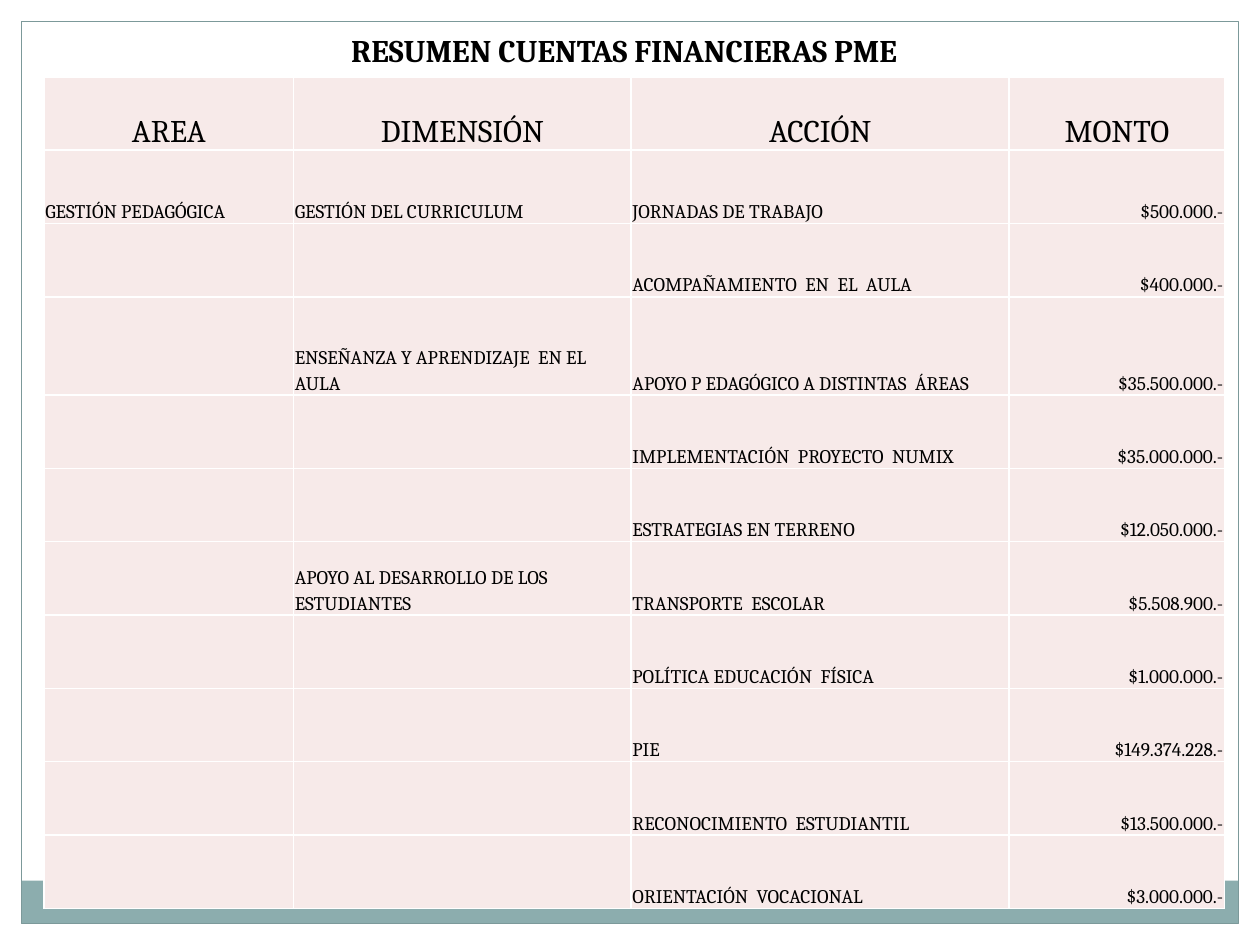
"""Builds a one-slide summary of PME financial accounts."""
from lxml import etree
from pptx import Presentation
from pptx import util as u
from pptx.dml.color import RGBColor
from pptx.enum import shapes, text
from pptx.oxml.ns import qn

TITLE = "RESUMEN CUENTAS FINANCIERAS PME"
HEADER = ("AREA", "DIMENSIÓN", "ACCIÓN", "MONTO")
ROWS = [
    ("GESTIÓN PEDAGÓGICA", "GESTIÓN DEL CURRICULUM", "JORNADAS DE TRABAJO", "$500.000.-"),
    ("", "", "ACOMPAÑAMIENTO  EN  EL  AULA", "$400.000.-"),
    ("", "ENSEÑANZA Y APRENDIZAJE  EN EL AULA", "APOYO P EDAGÓGICO A DISTINTAS  ÁREAS", "$35.500.000.-"),
    ("", "", "IMPLEMENTACIÓN  PROYECTO  NUMIX", "$35.000.000.-"),
    ("", "", "ESTRATEGIAS EN TERRENO", "$12.050.000.-"),
    ("", "APOYO AL DESARROLLO DE LOS  ESTUDIANTES", "TRANSPORTE  ESCOLAR", "$5.508.900.-"),
    ("", "", "POLÍTICA EDUCACIÓN  FÍSICA", "$1.000.000.-"),
    ("", "", "PIE", "$149.374.228.-"),
    ("", "", "RECONOCIMIENTO  ESTUDIANTIL", "$13.500.000.-"),
    ("", "", "ORIENTACIÓN  VOCACIONAL", "$3.000.000.-"),
]
COLS = (1.98, 2.68, 3, 1.71)
TALL_ROW, TALL_H = 3, 0.78
W, H, MARGIN, BAND_H = 10, 7.5, 0.17, 0.34
TABLE_X, TABLE_Y, TABLE_H = 0.35, 0.61, 6.6

FONT = "Cambria"
BLACK = RGBColor(0, 0, 0)
WHITE = RGBColor(0xFF, 0xFF, 0xFF)
TEAL = RGBColor(0x8C, 0xAD, 0xAE)
FRAME = RGBColor(0x7C, 0x99, 0x9A)
PINK = RGBColor(0xF7, 0xEA, 0xE9)
AL = text.PP_ALIGN


def write(tf, words, size=11, bold=False, align=AL.LEFT, spacing=None):
    p = tf.paragraphs[0]
    p.alignment, p.line_spacing = align, spacing
    r = p.add_run()
    r.text = words
    r.font.name, r.font.size, r.font.bold = FONT, u.Pt(size), bold
    r.font.color.rgb = BLACK


def rect(s, x, y, w, h, fill=None, line=None):
    sp = s.shapes.add_shape(shapes.MSO_SHAPE.RECTANGLE, *map(u.Inches, (x, y, w, h)))
    sp.shadow.inherit = False
    for part, color in ((sp.fill, fill), (sp.line.fill, line)):
        if color is None:
            part.background()
        else:
            part.solid()
            part.fore_color.rgb = color
    if line is not None:
        sp.line.width = u.Pt(0.75)


def style_cell(cell):
    cell.vertical_anchor = text.MSO_ANCHOR.BOTTOM
    cell.margin_left = cell.margin_right = cell.margin_top = u.Inches(0.01)
    cell.margin_bottom = 0
    tcPr = cell._tc.get_or_add_tcPr()
    for side in ("a:lnL", "a:lnR", "a:lnT", "a:lnB"):
        ln = etree.SubElement(tcPr, qn(side), w=str(u.Pt(1)))
        fill = etree.SubElement(ln, qn("a:solidFill"))
        etree.SubElement(fill, qn("a:srgbClr"), val=str(WHITE))
    cell.fill.solid()
    cell.fill.fore_color.rgb = PINK


def add_frame(s):
    inner_w, inner_h = W - 2 * MARGIN, H - 2 * MARGIN
    for x, y, w, h in ((0, 0, W, MARGIN), (W - MARGIN, 0, MARGIN, H), (0, 0, MARGIN, H)):
        rect(s, x, y, w, h, fill=WHITE)
    rect(s, MARGIN, H - MARGIN - BAND_H, inner_w, BAND_H, fill=TEAL)
    rect(s, MARGIN, MARGIN, inner_w, inner_h, line=FRAME)


def add_summary(s):
    data = [HEADER] + ROWS
    row_h = (TABLE_H - TALL_H) / (len(data) - 1)
    box = map(u.Inches, (TABLE_X, TABLE_Y, sum(COLS), TABLE_H))
    table = s.shapes.add_table(len(data), len(COLS), *box).table
    for col, width in zip(table.columns, COLS):
        col.width = u.Inches(width)
    for i, row in enumerate(data):
        table.rows[i].height = u.Inches(TALL_H if i == TALL_ROW else row_h)
        for j, words in enumerate(row):
            cell = table.cell(i, j)
            style_cell(cell)
            if words:
                align = AL.CENTER if i == 0 else AL.RIGHT if j == len(COLS) - 1 else AL.LEFT
                write(cell.text_frame, words, size=11 if i else 18, align=align, spacing=1.15)


def main():
    prs = Presentation()
    prs.slide_width, prs.slide_height = u.Inches(W), u.Inches(H)
    s = prs.slides.add_slide(prs.slide_layouts[6])
    add_frame(s)
    tf = s.shapes.add_textbox(*map(u.Inches, (2.08, 0.2, 5.75, 0.4))).text_frame
    tf.word_wrap = True
    tf.auto_size = text.MSO_AUTO_SIZE.SHAPE_TO_FIT_TEXT
    write(tf, TITLE, size=18, bold=True, align=AL.CENTER)
    add_summary(s)
    prs.save("out.pptx")


if __name__ == "__main__":
    main()
